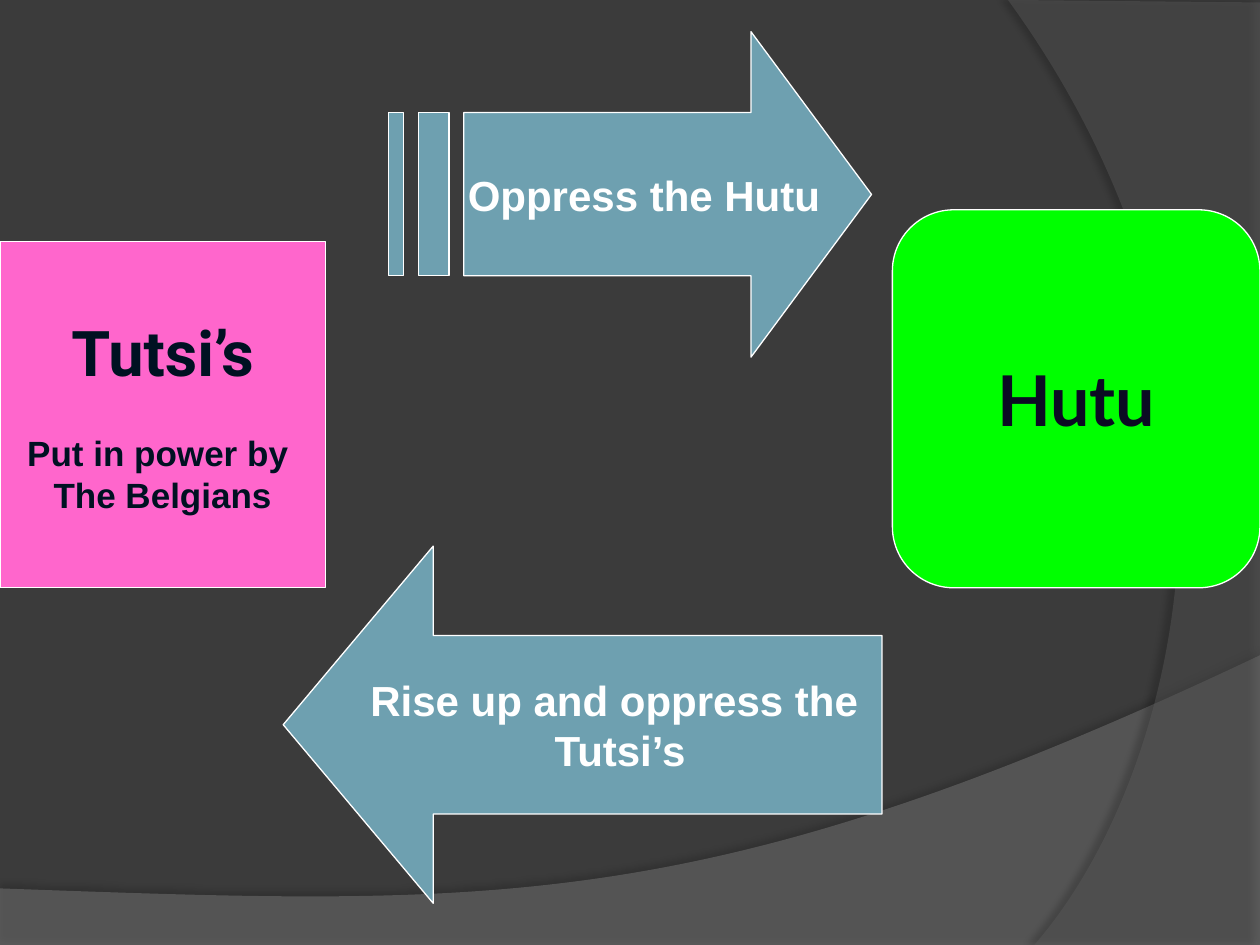
from lxml import etree
from pptx import Presentation
from pptx.dml.color import RGBColor
from pptx.enum.shapes import MSO_SHAPE
from pptx.enum.text import MSO_ANCHOR, PP_ALIGN
from pptx.oxml.ns import qn
from pptx.util import Cm, Pt

PROCESS = MSO_SHAPE.FLOWCHART_PROCESS
ROUNDED = MSO_SHAPE.FLOWCHART_ALTERNATE_PROCESS
LEFT_ARROW = MSO_SHAPE.LEFT_ARROW
MIDDLE = MSO_ANCHOR.MIDDLE
CENTER = PP_ALIGN.CENTER

BACKGROUND = RGBColor(0x3B, 0x3B, 0x3B)
LOWER_WAVE = RGBColor(0x7F, 0x7F, 0x7F)
RIGHT_WAVE = RGBColor(0x5E, 0x5E, 0x5E)
PINK = RGBColor(0xFF, 0x66, 0xCC)
GREEN = RGBColor(0x00, 0xFF, 0x00)
TEAL = RGBColor(0x6E, 0xA0, 0xB0)
WHITE = RGBColor(0xFF, 0xFF, 0xFF)
INK = RGBColor(0x00, 0x11, 0x22)
NAVY = RGBColor(0x0B, 0x0B, 0x23)

TUTSI_NAME = {"name": "Roboto", "size": Pt(36), "bold": True}
TUTSI_NOTE = {"name": "Arial", "size": Pt(20), "bold": True}
HUTU_NAME = {"name": "Lato", "size": Pt(40), "bold": True}
ARROW_TEXT = {"name": "Arial", "size": Pt(24), "bold": True}


def box_outline(left, top, right, bottom):
    return [(left, top), (right, top), (right, bottom), (left, bottom)]


def add_outline(slide, contours):
    """One freeform made of closed contours, given in centimetres."""
    builder = None
    for contour in contours:
        points = [(Cm(x), Cm(y)) for x, y in contour]
        if builder is None:
            builder = slide.shapes.build_freeform(*points[0])
        else:
            builder.move_to(*points[0])
        builder.add_line_segments(points[1:], close=True)
    return builder.convert_to_shape()


def bend_last_side(shape, controls):
    """Turn the side that ends at the last vertex into a cubic curve."""
    side = shape._element.findall(".//" + qn("a:lnTo"))[-1]
    side.tag = qn("a:cubicBezTo")
    for index, (x, y) in enumerate(controls):
        point = etree.Element(qn("a:pt"), x=str(Cm(x) - shape.left),
                              y=str(Cm(y) - shape.top))
        side.insert(index, point)


def add_wave(slide, points, controls, color, opacity, shadow_opacity, distance, direction):
    """Translucent background wave with a soft edge shadow."""
    shape = add_outline(slide, [points])
    bend_last_side(shape, controls)
    shape.fill.solid()
    shape.fill.fore_color.rgb = color
    shape.line.fill.background()
    fill_color = shape._element.spPr.find(qn("a:solidFill"))[0]
    etree.SubElement(fill_color, qn("a:alpha"), val=str(opacity * 1000))
    shape.shadow.inherit = False
    effects = shape._element.spPr.find(qn("a:effectLst"))
    shadow = etree.SubElement(
        effects, qn("a:outerShdw"), blurRad=str(Pt(4)), dist=str(Pt(distance)),
        dir=str(direction * 60000), algn="ctr", rotWithShape="0")
    shadow_color = etree.SubElement(shadow, qn("a:srgbClr"), val="000000")
    etree.SubElement(shadow_color, qn("a:alpha"), val=str(shadow_opacity * 1000))


def style_shape(shape, color):
    shape.shadow.inherit = False
    shape.fill.solid()
    shape.fill.fore_color.rgb = color
    shape.line.color.rgb = WHITE
    shape.line.width = Pt(0.75)


def write_lines(shape, lines):
    """Centred lines of (text, font format, colour, space before in points)."""
    frame = shape.text_frame
    frame.word_wrap = False
    frame.vertical_anchor = MIDDLE
    for index, (text, font_format, color, space) in enumerate(lines):
        paragraph = frame.add_paragraph() if index else frame.paragraphs[0]
        paragraph.alignment = CENTER
        paragraph.space_before = Pt(space)
        run = paragraph.add_run()
        run.text = text
        for name, value in font_format.items():
            setattr(run.font, name, value)
        run.font.color.rgb = color


def add_block(slide, kind, box, color, lines, adjustments=()):
    shape = slide.shapes.add_shape(kind, *(Cm(length) for length in box))
    for index, value in enumerate(adjustments):
        shape.adjustments[index] = value
    style_shape(shape, color)
    write_lines(shape, lines)


def add_striped_arrow(slide, lines):
    shaft_top, shaft_bottom = 2.27, 5.56
    head, tip, middle = 15.14, 17.57, 3.92
    arrow = [(head, 0.64), (head, shaft_top), (9.35, shaft_top), (9.35, shaft_bottom),
             (head, shaft_bottom), (head, 7.2), (tip, middle)]
    stripes = [box_outline(left, shaft_top, right, shaft_bottom)
               for left, right in ((8.44, 9.05), (7.83, 8.13))]
    shape = add_outline(slide, [arrow] + stripes)
    style_shape(shape, TEAL)
    write_lines(shape, lines)
    shape.text_frame.margin_left = Cm(0.58)


def main():
    presentation = Presentation()
    presentation.slide_width, presentation.slide_height = Cm(25.4), Cm(19.05)
    slide = presentation.slides.add_slide(presentation.slide_layouts[6])
    slide.background.fill.solid()
    slide.background.fill.fore_color.rgb = BACKGROUND

    # Background waves
    add_wave(slide, [(0, 17.91), (0, 19.08), (25.4, 19.08), (25.4, 13.21), (0, 17.91)],
             [(14.2, 18.52), (9.93, 18.26)], LOWER_WAVE, 45, 35, 3.5, 270)
    add_wave(slide, [(25.4, 0.05), (25.4, 19.05), (20.85, 19.05), (20.32, 0)],
             [(23.75, 15.72), (25.86, 7.62)], RIGHT_WAVE, 40, 45, 4, 180)

    # Groups and the arrows between them
    add_block(slide, PROCESS, (0, 4.87, 6.56, 6.98), PINK, [
        ("Tutsi’s", TUTSI_NAME, INK, 0),
        ("Put in power by ", TUTSI_NOTE, INK, 24),
        ("The Belgians", TUTSI_NOTE, INK, 0)])
    add_striped_arrow(slide, [(" Oppress the Hutu", ARROW_TEXT, WHITE, 0)])
    add_block(slide, ROUNDED, (17.99, 4.23, 7.41, 7.62), GREEN,
              [("Hutu", HUTU_NAME, NAVY, 0)])
    add_block(slide, LEFT_ARROW, (5.71, 11.01, 12.07, 7.2), TEAL, [
        ("Rise up and oppress the ", ARROW_TEXT, WHITE, 0),
        ("Tutsi’s", ARROW_TEXT, WHITE, 0)], (0.5, 0.42))

    presentation.save("out.pptx")


if __name__ == "__main__":
    main()
